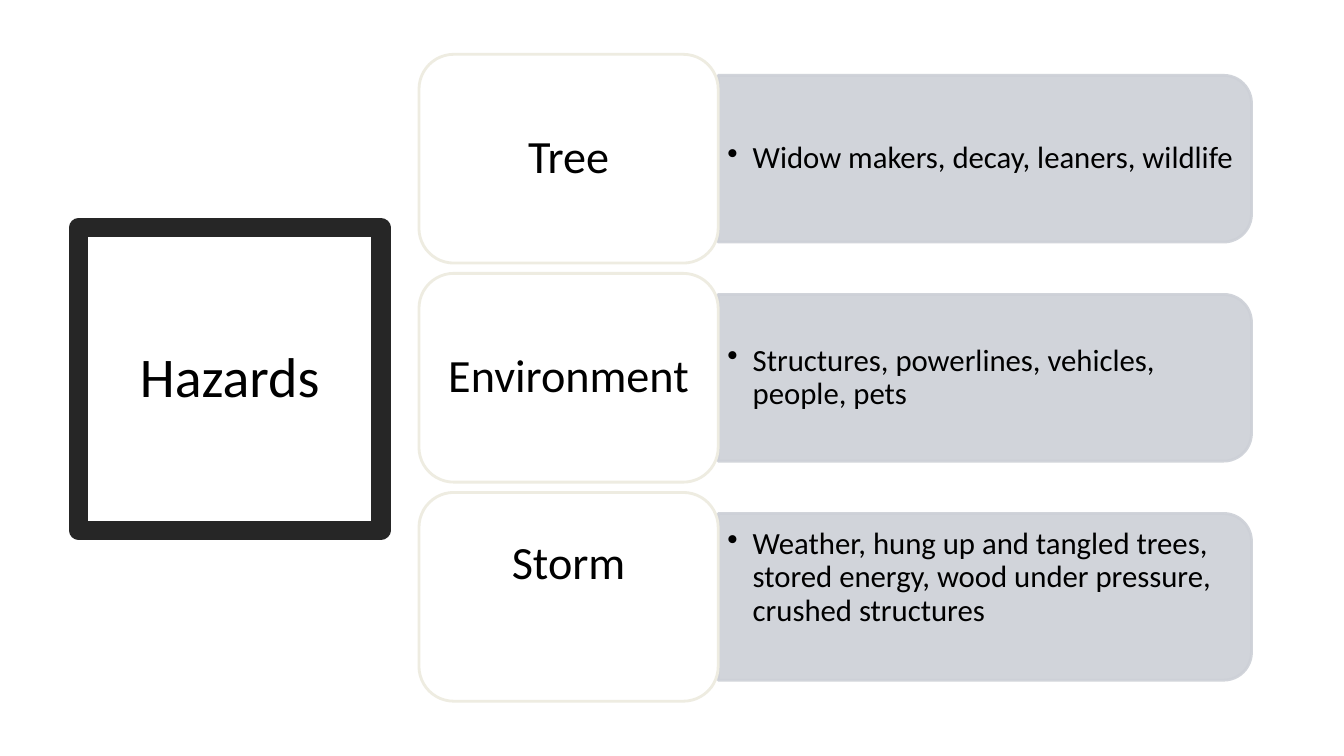
from dataclasses import dataclass
from math import cos, pi, sin

from lxml.etree import SubElement
from pptx import Presentation
from pptx.dml.color import RGBColor
from pptx.enum.shapes import MSO_SHAPE
from pptx.enum.text import MSO_ANCHOR, MSO_AUTO_SIZE, PP_ALIGN
from pptx.oxml.ns import qn
from pptx.util import Cm, Pt

COLORS = {
    "text": "000000",
    "frame": "262626",
    "card": "FFFFFF",
    "card_line": "EEECE1",
    "panel": "CDD0D7",
}
FONT = "Calibri"

# Row grid, in cm
ROW_MIDDLE, ROW_PITCH = 4.0, 5.52
CARD_LEFT, CARD_W, CARD_H = 10.56, 7.54, 5.26
PANEL_LEFT, PANEL_W, PANEL_H = CARD_LEFT + CARD_W, 13.44, 4.2
PANEL_RADIUS, ARC_STEPS = 0.7, 12


@dataclass
class Hazard:
    name: str
    details: str
    card_lift: float = 0  # extra bottom margins, in cm
    panel_lift: float = 0


HAZARDS = [
    Hazard("Tree", "Widow makers, decay, leaners, wildlife"),
    Hazard("Environment", "Structures, powerlines, vehicles, people, pets"),
    Hazard(
        "Storm",
        "Weather, hung up and tangled trees, stored energy, "
        "wood under pressure, crushed structures",
        card_lift=1.65,
        panel_lift=0.95,
    ),
]


def rgb(name: str) -> RGBColor:
    return RGBColor.from_string(COLORS[name])


def paint(sp, fill: str, line: str, width: float = 2) -> None:
    sp.fill.solid()
    sp.fill.fore_color.rgb = rgb(fill)
    sp.line.color.rgb = rgb(line)
    sp.line.width = Pt(width)


def write(sp, text: str, size: int, align: PP_ALIGN, margins: tuple):
    """Fill a shape with one paragraph; margins are left, top, right, bottom."""
    tf = sp.text_frame
    tf.text = text
    left, top, right, bottom = (Cm(m) for m in margins)
    frame_format = {
        "word_wrap": True,
        "auto_size": MSO_AUTO_SIZE.NONE,
        "vertical_anchor": MSO_ANCHOR.MIDDLE,
        "margin_left": left,
        "margin_top": top,
        "margin_right": right,
        "margin_bottom": bottom,
    }
    for key, value in frame_format.items():
        setattr(tf, key, value)
    p = tf.paragraphs[0]
    p.alignment = align
    p.line_spacing = 0.9
    font = p.runs[0].font
    for key, value in {"name": FONT, "size": Pt(size)}.items():
        setattr(font, key, value)
    font.color.rgb = rgb("text")
    return p


def add_bullet(p) -> None:
    pPr = p._p.get_or_add_pPr()
    pPr.set("marL", str(Cm(0.64)))
    pPr.set("indent", str(-Cm(0.64)))
    SubElement(pPr, qn("a:buChar")).set("char", "•")


def add_panel(slide, hazard: Hazard, middle: float) -> None:
    """Draw a panel whose two right-hand corners are rounded."""
    top, bottom = middle - PANEL_H / 2, middle + PANEL_H / 2
    right = PANEL_LEFT + PANEL_W
    corner_x = right - PANEL_RADIUS
    points = []
    for center_y, start in ((top + PANEL_RADIUS, -pi / 2), (bottom - PANEL_RADIUS, 0)):
        for step in range(ARC_STEPS + 1):
            angle = start + step / ARC_STEPS * pi / 2
            x = corner_x + PANEL_RADIUS * cos(angle)
            y = center_y + PANEL_RADIUS * sin(angle)
            points.append((Cm(x), Cm(y)))
    points.append((Cm(PANEL_LEFT), Cm(bottom)))

    builder = slide.shapes.build_freeform(Cm(PANEL_LEFT), Cm(top))
    builder.add_line_segments(points, close=True)
    sp = builder.convert_to_shape()
    sp.shadow.inherit = False
    paint(sp, "panel", "panel")
    for color in sp._element.spPr.iter(qn("a:srgbClr")):
        SubElement(color, qn("a:alpha")).set("val", "90000")
    margins = (0.23, 0.33, 0.38, 0.33 + hazard.panel_lift)
    add_bullet(write(sp, hazard.details, 22, PP_ALIGN.LEFT, margins))


def add_card(slide, hazard: Hazard, middle: float) -> None:
    sp = slide.shapes.add_shape(
        MSO_SHAPE.ROUNDED_RECTANGLE,
        Cm(CARD_LEFT), Cm(middle - CARD_H / 2), Cm(CARD_W), Cm(CARD_H),
    )
    sp.shadow.inherit = False
    paint(sp, "card", "card_line")
    margins = (0.35, 0.18, 0.35, 0.18 + hazard.card_lift)
    write(sp, hazard.name, 33, PP_ALIGN.CENTER, margins)


def add_title(slide) -> None:
    sp = slide.shapes.title
    box = {"left": 1.98, "top": 5.74, "width": 7.62, "height": 7.62}
    for key, value in box.items():
        setattr(sp, key, Cm(value))
    paint(sp, "card", "frame", 13.75)
    write(sp, "Hazards", 40, PP_ALIGN.CENTER, (0.25, 0.13, 0.25, 0.13))


def main() -> None:
    prs = Presentation()
    prs.slide_width, prs.slide_height = Cm(33.87), Cm(19.05)
    slide = prs.slides.add_slide(prs.slide_layouts[5])

    # Framed title on the left
    add_title(slide)

    # One panel and card per hazard
    for row, hazard in enumerate(HAZARDS):
        middle = ROW_MIDDLE + row * ROW_PITCH
        add_panel(slide, hazard, middle)
        add_card(slide, hazard, middle)

    prs.save("out.pptx")


if __name__ == "__main__":
    main()
